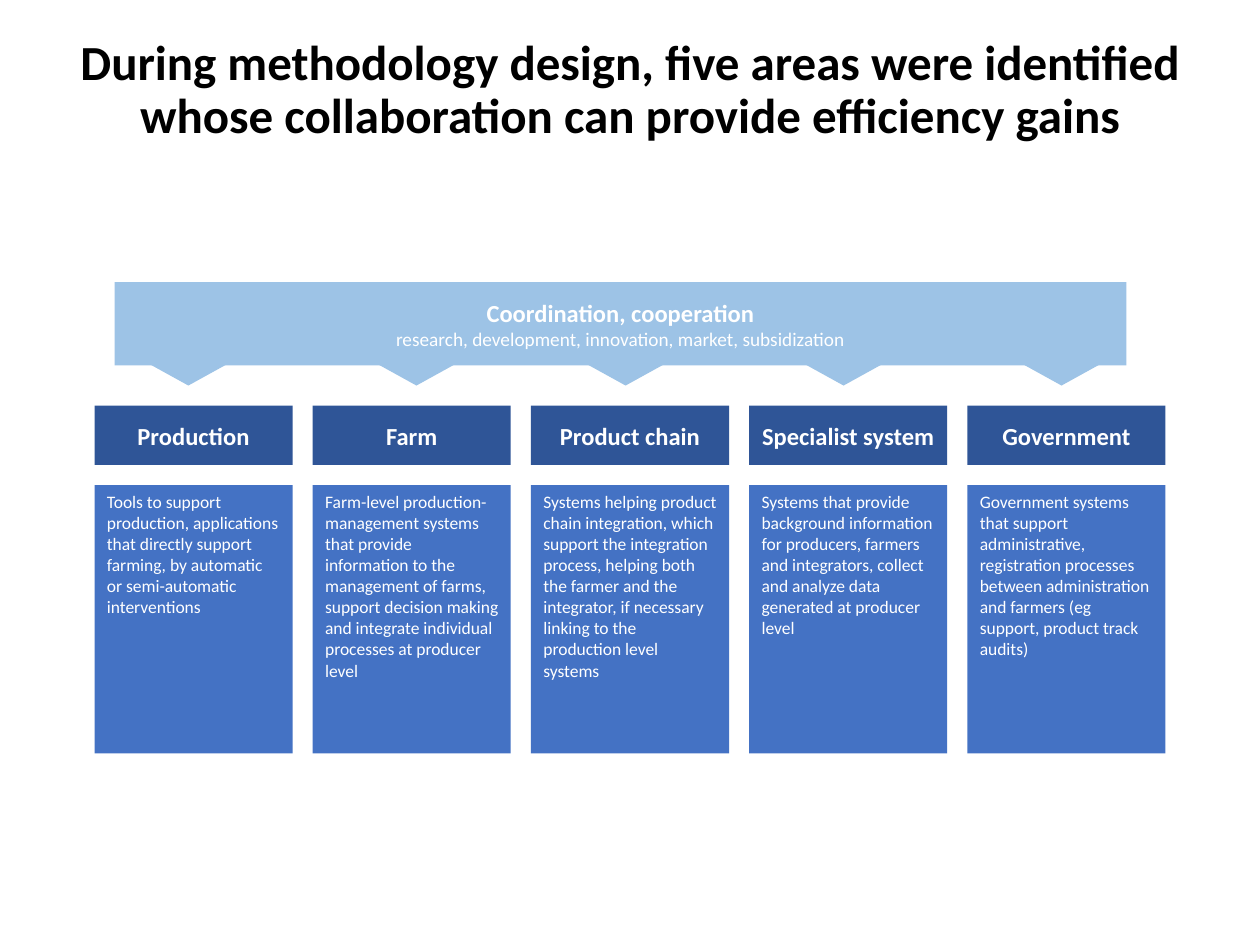
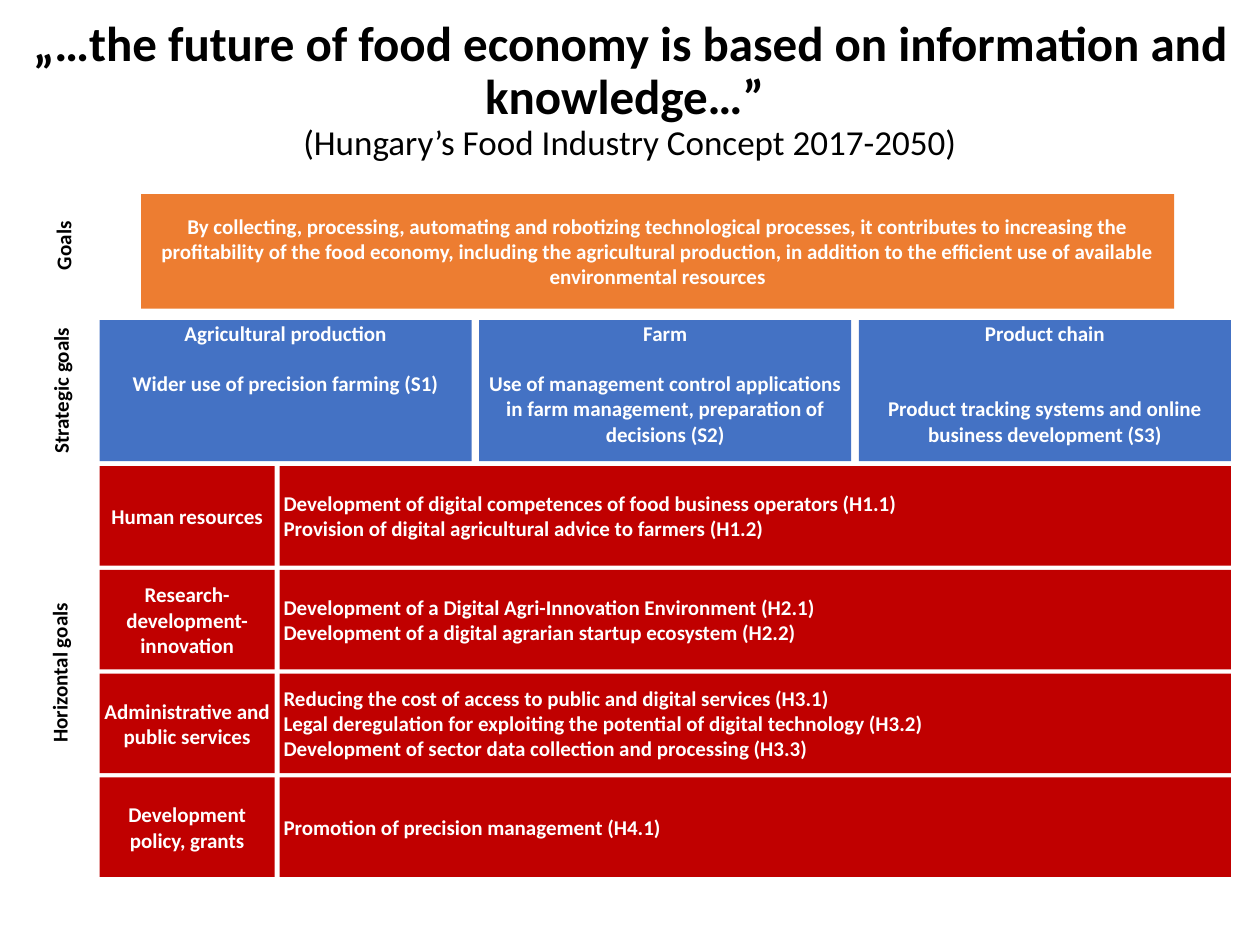
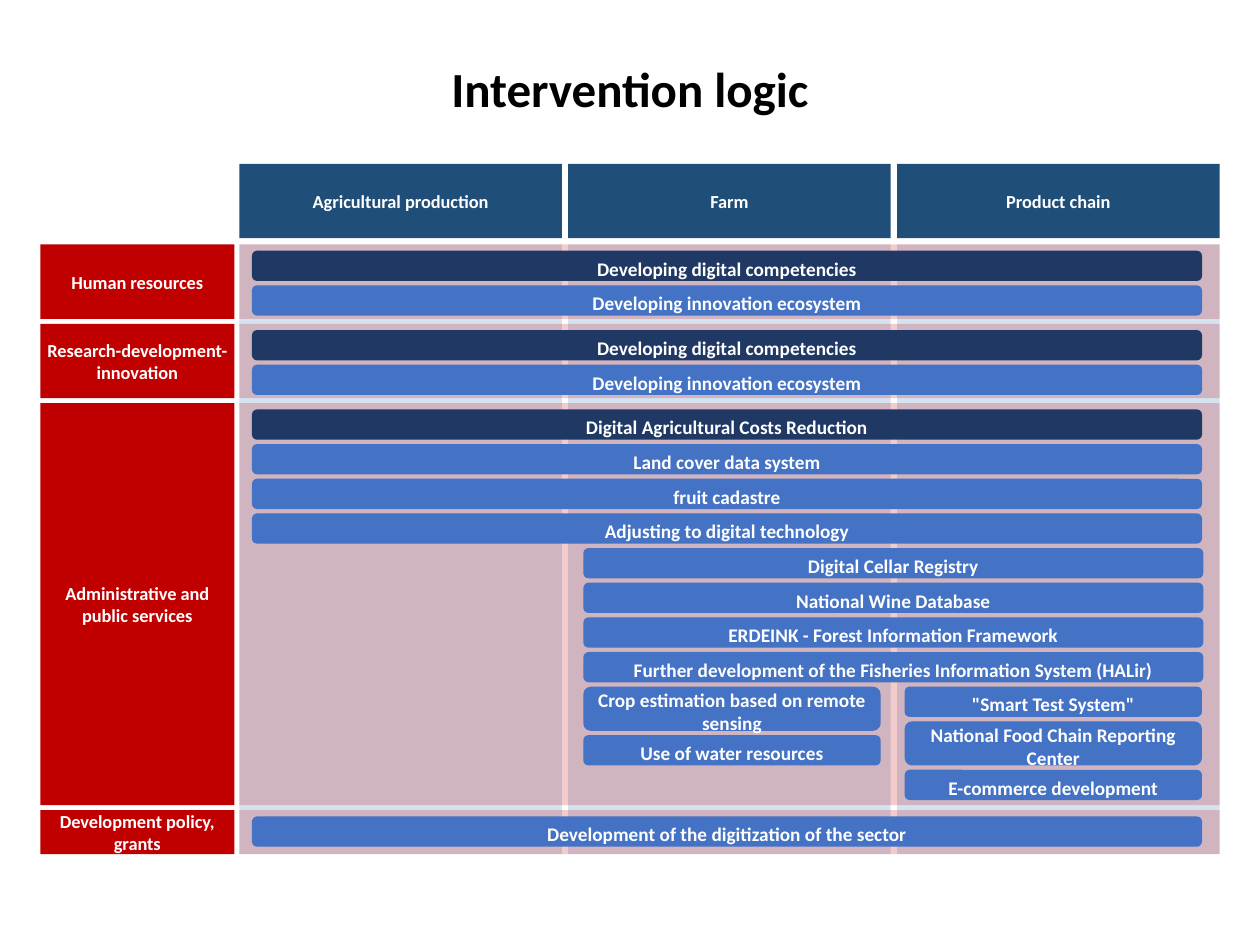
from collections import namedtuple

from pptx import Presentation
from pptx.dml.color import RGBColor
from pptx.enum.shapes import MSO_SHAPE
from pptx.enum.text import MSO_ANCHOR, MSO_AUTO_SIZE, PP_ALIGN
from pptx.oxml.ns import qn
from pptx.util import Inches, Pt
from lxml import etree

COLORS = {
    "white": "FFFFFF",
    "black": "000000",
    "banner": "9DC3E6",
    "heading": "2F5597",
    "blue": "4472C4",
    "orange": "ED7D31",
    "red": "C00000",
    "navy": "203864",
    "teal": "1F4E79",
    "column": "2E75B6",
}
FONT = "Calibri"
INSETS = (0.1, 0.05, 0.1, 0.05)
TIGHT = (0.03, 0.05, 0.03, 0.05)
BAR_INSETS = (0, 0.04, 0, 0)
BAR_HEIGHTS = {1: 0.24, 2: 0.35}
BAR_GAP = 0.035

Box = namedtuple("Box", "left top width height")


def emu(box):
    return [Inches(length) for length in box]


def split_columns(box, count, gap):
    width = (box.width - gap * (count - 1)) / count
    return [Box(box.left + i * (width + gap), box.top, width, box.height)
            for i in range(count)]


def split_rows(box, heights, gap):
    rows, top = [], box.top
    for height in heights:
        rows.append(Box(box.left, top, box.width, height))
        top += height + gap
    return rows


def add_span(para, text, size=12, bold=True, color="white"):
    span = para.add_run()
    span.text = text
    span.font.name = FONT
    span.font.size = Pt(size)
    span.font.bold = bold
    span.font.color.rgb = RGBColor.from_string(COLORS[color])


def write_text(shape, *texts, align=PP_ALIGN.CENTER, anchor=MSO_ANCHOR.MIDDLE,
               insets=INSETS, gap=0, wrap=True, **span_format):
    """Write one paragraph per text; gap is the space between them in points."""
    frame = shape.text_frame
    frame.auto_size = MSO_AUTO_SIZE.NONE
    frame.word_wrap = wrap
    frame.vertical_anchor = anchor
    (frame.margin_left, frame.margin_top,
     frame.margin_right, frame.margin_bottom) = emu(insets)
    for i, text in enumerate(texts):
        para = frame.add_paragraph() if i else frame.paragraphs[0]
        para.alignment = align
        if i and gap:
            para.space_before = Pt(gap)
        add_span(para, text, **span_format)
    return frame


def add_block(page, box, color, *texts, kind=MSO_SHAPE.RECTANGLE, alpha=None, **text_format):
    """Add a filled shape without outline; alpha is its opacity in percent."""
    block = page.shapes.add_shape(kind, *emu(box))
    block.shadow.inherit = False
    block.line.fill.background()
    block.fill.solid()
    block.fill.fore_color.rgb = RGBColor.from_string(COLORS[color])
    if alpha is not None:
        tint = block.fill._xPr.find(".//" + qn("a:srgbClr"))
        etree.SubElement(tint, qn("a:alpha"), val=str(alpha * 1000))
    if texts:
        write_text(block, *texts, **text_format)
    return block


def add_page(deck, title):
    page = deck.slides.add_slide(deck.slide_layouts[5])
    heading = page.shapes.title
    heading.left, heading.top, heading.width, heading.height = emu(Box(0.01, 0, 9.98, 1.45))
    frame = write_text(heading, title, size=28, color="black")
    frame.paragraphs[0].line_spacing = 0.9
    return page


# Five areas

def add_banner(page, box, arrow_offsets):
    frame = add_block(page, box, "banner", "Coordination, cooperation", size=14).text_frame
    subtitle = frame.add_paragraph()
    subtitle.alignment = PP_ALIGN.CENTER
    add_span(subtitle, "research, development, innovation, market, subsidization",
             size=11, bold=False)
    for offset in arrow_offsets:
        arrow_box = Box(box.left + offset, box.top + 0.58, 0.87, 0.24)
        arrow = add_block(page, arrow_box, "banner", kind=MSO_SHAPE.ISOSCELES_TRIANGLE)
        arrow.rotation = 180


def add_areas(page, box, areas):
    for column, (name, description) in zip(split_columns(box, len(areas), 0.16), areas):
        add_block(page, column._replace(height=0.47), "heading", name, size=14)
        body = column._replace(top=column.top + 0.63, height=column.height - 0.63)
        add_block(page, body, "blue", description, size=10, bold=False,
                  align=PP_ALIGN.LEFT, anchor=MSO_ANCHOR.TOP)


def build_areas_page(deck):
    page = add_page(deck, "During methodology design, five areas were identified "
                          "whose collaboration can provide efficiency gains")
    add_banner(page, Box(0.91, 2.24, 8.03, 0.66), [0.15, 1.96, 3.62, 5.35, 7.08])
    add_areas(page, Box(0.75, 3.22, 8.5, 2.76), [
        ("Production",
         "Tools to support production, applications that directly support farming, "
         "by automatic or semi-automatic interventions"),
        ("Farm",
         "Farm-level production-management systems that provide information to the "
         "management of farms, support decision making and integrate individual "
         "processes at producer level"),
        ("Product chain",
         "Systems helping product chain integration, which support the integration "
         "process, helping both the farmer and the integrator, if necessary linking "
         "to the production level systems"),
        ("Specialist system",
         "Systems that provide background information for producers, farmers and "
         "integrators, collect and analyze data generated at producer level"),
        ("Government",
         "Government systems that support administrative, registration processes "
         "between administration and farmers (eg support, product track audits)"),
    ])


# Goals

def add_side_label(page, text, center_x, center_y, length):
    box = Box(center_x - length / 2, center_y - 0.15, length, 0.3)
    label = page.shapes.add_textbox(*emu(box))
    label.rotation = 270
    write_text(label, text, color="black", wrap=False)


def add_strategic_goals(page, box, goals):
    for column, (area, goal, gap) in zip(split_columns(box, len(goals), 0.06), goals):
        add_block(page, column, "blue", area, goal, gap=gap,
                  anchor=MSO_ANCHOR.TOP, insets=(0.03, 0, 0.03, 0.03))


def add_horizontal_goals(page, box, goals):
    label_width, gap = 1.39, 0.04
    for row, (field, targets) in zip(split_rows(box, [0.79] * len(goals), 0.033), goals):
        add_block(page, row._replace(width=label_width), "red", field, insets=TIGHT)
        shift = label_width + gap
        target_box = row._replace(left=row.left + shift, width=row.width - shift)
        add_block(page, target_box, "red", *targets, align=PP_ALIGN.LEFT, insets=TIGHT)


def build_goals_page(deck):
    page = add_page(deck, "„…the future of food economy is based on information "
                          "and knowledge…” ")
    title = page.shapes.title.text_frame.paragraphs[0]
    title.add_line_break()
    add_span(title, "(Hungary’s Food Industry Concept 2017-2050)",
             size=20, bold=False, color="black")
    add_block(page, Box(1.12, 1.54, 8.2, 0.91), "orange",
              "By collecting, processing, automating and robotizing technological "
              "processes, it contributes to increasing the profitability of the food "
              "economy, including the agricultural production, in addition to the "
              "efficient use of available environmental resources")
    add_strategic_goals(page, Box(0.79, 2.54, 8.98, 1.12), [
        ("Agricultural production", "Wider use of precision farming (S1)", 14.5),
        ("Farm", "Use of management control applications in farm management, "
                 "preparation of decisions (S2)", 14.5),
        ("Product chain", "Product tracking systems and online business "
                          "development (S3)", 29),
    ])
    add_horizontal_goals(page, Box(0.79, 3.7, 8.98, 3.26), [
        ("Human resources",
         ["Development of digital competences of food business operators (H1.1)",
          "Provision of digital agricultural advice to farmers (H1.2)"]),
        ("Research-development-innovation",
         ["Development of a Digital Agri-Innovation Environment (H2.1)",
          "Development of a digital agrarian startup ecosystem (H2.2)"]),
        ("Administrative and public services",
         ["Reducing the cost of access to public and digital services (H3.1)",
          "Legal deregulation for exploiting the potential of digital technology (H3.2)",
          "Development of sector data collection and processing (H3.3)"]),
        ("Development policy, grants", ["Promotion of precision management (H4.1)"]),
    ])
    add_side_label(page, "Goals", 0.5, 1.95, 0.59)
    add_side_label(page, "Strategic goals", 0.48, 3.1, 1.21)
    add_side_label(page, "Horizontal goals", 0.47, 5.34, 1.33)


# Intervention logic

def add_columns(page, box, names):
    for column, name in zip(split_columns(box, len(names), 0.05), names):
        add_block(page, column._replace(height=0.59), "teal", name, size=10.5, insets=TIGHT)
        body = column._replace(top=column.top + 0.64, height=column.height - 0.64)
        add_block(page, body, "column", alpha=20)


def add_rows(page, box, fields):
    """Add the red labels and their tinted bands, and return the bands."""
    bands = []
    heights = [height for _, height in fields]
    for row, (field, _) in zip(split_rows(box, heights, 0.04), fields):
        add_block(page, row._replace(width=1.54), "red", field, size=10.5, insets=TIGHT)
        band = row._replace(left=row.left + 1.58, width=row.width - 1.58)
        add_block(page, band, "red", alpha=20)
        bands.append(band)
    return bands


def stack_bars(page, band, bars, left=0.1, width=7.54, top=0.05, lead=False):
    """Stack (text, line count) bars in a band; a leading bar is darker."""
    first = Box(band.left + left, band.top + top, width, 0)
    heights = [BAR_HEIGHTS[lines] for _, lines in bars]
    for i, (bar, (text, _)) in enumerate(zip(split_rows(first, heights, BAR_GAP), bars)):
        color = "navy" if lead and i == 0 else "blue"
        add_block(page, bar, color, text, kind=MSO_SHAPE.ROUNDED_RECTANGLE,
                  size=11, insets=BAR_INSETS)


def build_logic_page(deck):
    page = add_page(deck, "Intervention logic")
    add_columns(page, Box(1.9, 1.3, 7.78, 5.48),
                ["Agricultural production", "Farm", "Product chain"])
    people, research, services, policy = add_rows(page, Box(0.32, 1.94, 9.36, 4.84), [
        ("Human resources", 0.59),
        ("Research-development-innovation", 0.59),
        ("Administrative and public services", 3.19),
        ("Development policy, grants", 0.35),
    ])
    for band in (people, research):
        stack_bars(page, band, [("Developing digital competencies", 1),
                                ("Developing innovation ecosystem", 1)], lead=True)
    stack_bars(page, services, [
        ("Digital Agricultural Costs Reduction", 1),
        ("Land cover data system", 1),
        ("fruit cadastre", 1),
        ("Adjusting to digital technology", 1),
    ], lead=True)
    stack_bars(page, services, [
        ("Digital Cellar Registry", 1),
        ("National Wine Database", 1),
        ("ERDEINK - Forest Information Framework", 1),
        ("Further development of the Fisheries Information System (HALir)", 1),
    ], left=2.73, width=4.92, top=1.15)
    stack_bars(page, services, [
        ("Crop estimation based on remote sensing", 2),
        ("Use of water resources", 1),
    ], left=2.73, width=2.36, top=2.25)
    stack_bars(page, services, [
        ('"Smart Test System"', 1),
        ("National Food Chain Reporting Center", 2),
        ("E-commerce development", 1),
    ], left=5.28, width=2.36, top=2.25)
    stack_bars(page, policy, [("Development of the digitization of the sector", 1)])


def main():
    deck = Presentation()
    deck.slide_width, deck.slide_height = Inches(10), Inches(7.5)
    build_areas_page(deck)
    build_goals_page(deck)
    build_logic_page(deck)
    deck.save("out.pptx")


if __name__ == "__main__":
    main()
